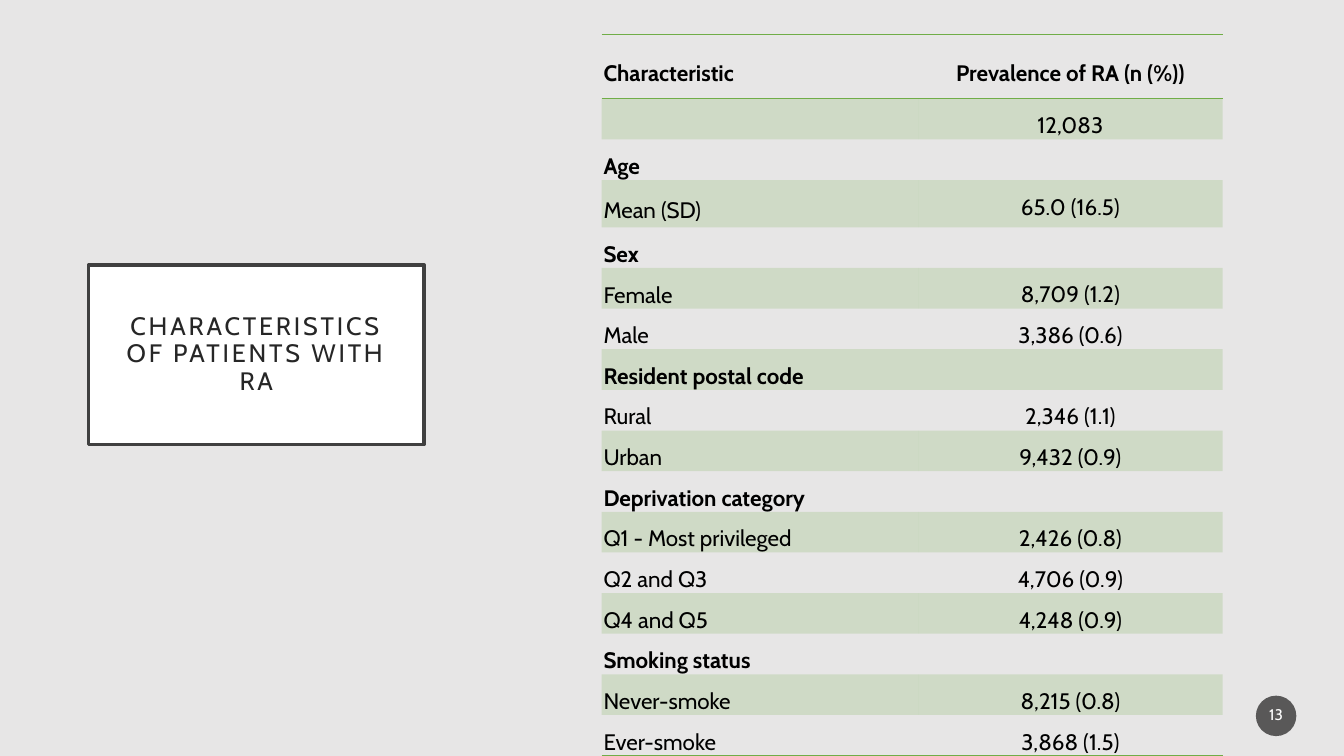
from dataclasses import dataclass

from lxml import etree
from pptx import Presentation
from pptx.dml.color import RGBColor
from pptx.enum import shapes, text
from pptx.oxml import ns
from pptx.util import Cm, Pt


@dataclass(frozen=True)
class Theme:
    font: str = "Cabin"
    back: str = "E7E6E6"
    white: str = "FFFFFF"
    black: str = "000000"
    ink: str = "262626"
    frame: str = "404040"
    badge: str = "1D1D1D"
    green: str = "70AD47"
    head: int = 18
    cell: int = 16
    page: int = 11


theme = Theme()


def write(frame, words, size, color, lead, bold=False, align=text.PP_ALIGN.CENTER):
    """Fill a text frame with one formatted paragraph."""
    frame.text = words
    para = frame.paragraphs[0]
    para.alignment = align
    para.line_spacing = lead
    font = para.runs[0].font
    font.name, font.size, font.bold = theme.font, Pt(size), bold
    font.color.rgb = RGBColor.from_string(color)
    return para


def paint(fill, node, color, alpha):
    """Give a solid fill, held by the XML node, a colour and a percent opacity."""
    fill.solid()
    fill.fore_color.rgb = RGBColor.from_string(color)
    tint = node.find(".//" + ns.qn("a:srgbClr"))
    etree.SubElement(tint, ns.qn("a:alpha"), val=str(alpha * 1000))


deck = Presentation()
deck.slide_width, deck.slide_height = Cm(33.87), Cm(19.05)
slide = deck.slides.add_slide(deck.slide_layouts[5])
slide.background.fill.solid()
slide.background.fill.fore_color.rgb = RGBColor.from_string(theme.back)

# Title box
title = slide.shapes.title
title.left, title.top, title.width, title.height = Cm(2.23), Cm(6.68), Cm(8.46), Cm(4.52)
title.fill.solid()
title.fill.fore_color.rgb = RGBColor.from_string(theme.white)
title.line.color.rgb = RGBColor.from_string(theme.frame)
title.line.width = Pt(2.5)
frame = title.text_frame
frame.word_wrap = True
frame.auto_size = text.MSO_AUTO_SIZE.NONE
frame.vertical_anchor = text.MSO_ANCHOR.MIDDLE
frame.margin_left = frame.margin_right = Cm(0.76)
frame.margin_top = frame.margin_bottom = Cm(0.51)
para = write(frame, "CHARACTERISTICS OF PATIENTS WITH RA", theme.head, theme.ink, 0.9)
para.runs[0].font._element.set("spc", "200")

# Page badge
badge = slide.shapes.add_shape(shapes.MSO_SHAPE.OVAL, Cm(31.65), Cm(17.53), Cm(1.02), Cm(1.02))
badge.shadow.inherit = False
badge.line.fill.background()
paint(badge.fill, badge._element.spPr, theme.badge, 70)
frame = badge.text_frame
frame.vertical_anchor = text.MSO_ANCHOR.MIDDLE
frame.margin_left = frame.margin_right = Cm(0.05)
para = write(frame, "13", theme.page, theme.white, 0.9)
para.space_after = Pt(6)

# Table: a name without a value is a group heading
rows = [
    ("Characteristic", "Prevalence of RA (n (%))"),
    ("", "12,083"),
    ("Age", ""),
    ("Mean (SD)", "65.0 (16.5)"),
    ("Sex", ""),
    ("Female", "8,709 (1.2)"),
    ("Male", "3,386 (0.6)"),
    ("Resident postal code", ""),
    ("Rural", "2,346 (1.1)"),
    ("Urban", "9,432 (0.9)"),
    ("Deprivation category", ""),
    ("Q1 - Most privileged", "2,426 (0.8)"),
    ("Q2 and Q3", "4,706 (0.9)"),
    ("Q4 and Q5", "4,248 (0.9)"),
    ("Smoking status", ""),
    ("Never-smoke", "8,215 (0.8)"),
    ("Ever-smoke", "3,868 (1.5)"),
]
last = len(rows) - 1
tall = {0: 1.63, 1: 0.66, 3: 1.19}
edges = {0: ("a:lnB", "a:lnT"), last: ("a:lnB",)}
plain = "{2D5ABB26-0587-4C30-8999-92F81FD0307C}"

grid = slide.shapes.add_table(len(rows), 2, Cm(15.16), Cm(0.86), Cm(15.65), Cm(16.26)).table
grid._tbl.tblPr.find(ns.qn("a:tableStyleId")).text = plain
grid.first_row = grid.horz_banding = False
for col, width in zip(grid.columns, (7.98, 7.67)):
    col.width = Cm(width)

for r, row in enumerate(rows):
    grid.rows[r].height = Cm(tall.get(r, 0.84))
    for c, words in enumerate(row):
        cell = grid.cell(r, c)
        cell.margin_left = cell.margin_right = Cm(0.05)
        cell.margin_top = cell.margin_bottom = 0
        if c == 0 or r < 2:
            cell.vertical_anchor = text.MSO_ANCHOR.MIDDLE
        if words:
            align = text.PP_ALIGN.CENTER if c else text.PP_ALIGN.LEFT
            bold = r == 0 or not row[1]
            write(cell.text_frame, words, theme.cell, theme.black, 1.5, bold, align)
        props = cell._tc.get_or_add_tcPr()
        if r % 2:
            paint(cell.fill, props, theme.green, 20)
        else:
            cell.fill.background()
        for edge in edges.get(r, ()):
            line = etree.Element(ns.qn(edge), w=str(Pt(1)))
            solid = etree.SubElement(line, ns.qn("a:solidFill"))
            etree.SubElement(solid, ns.qn("a:srgbClr"), val=theme.green)
            props.insert(0, line)

post = [name for name, _ in rows].index("Resident postal code")
grid.cell(post, 0).merge(grid.cell(post, 1))

deck.save("out.pptx")
